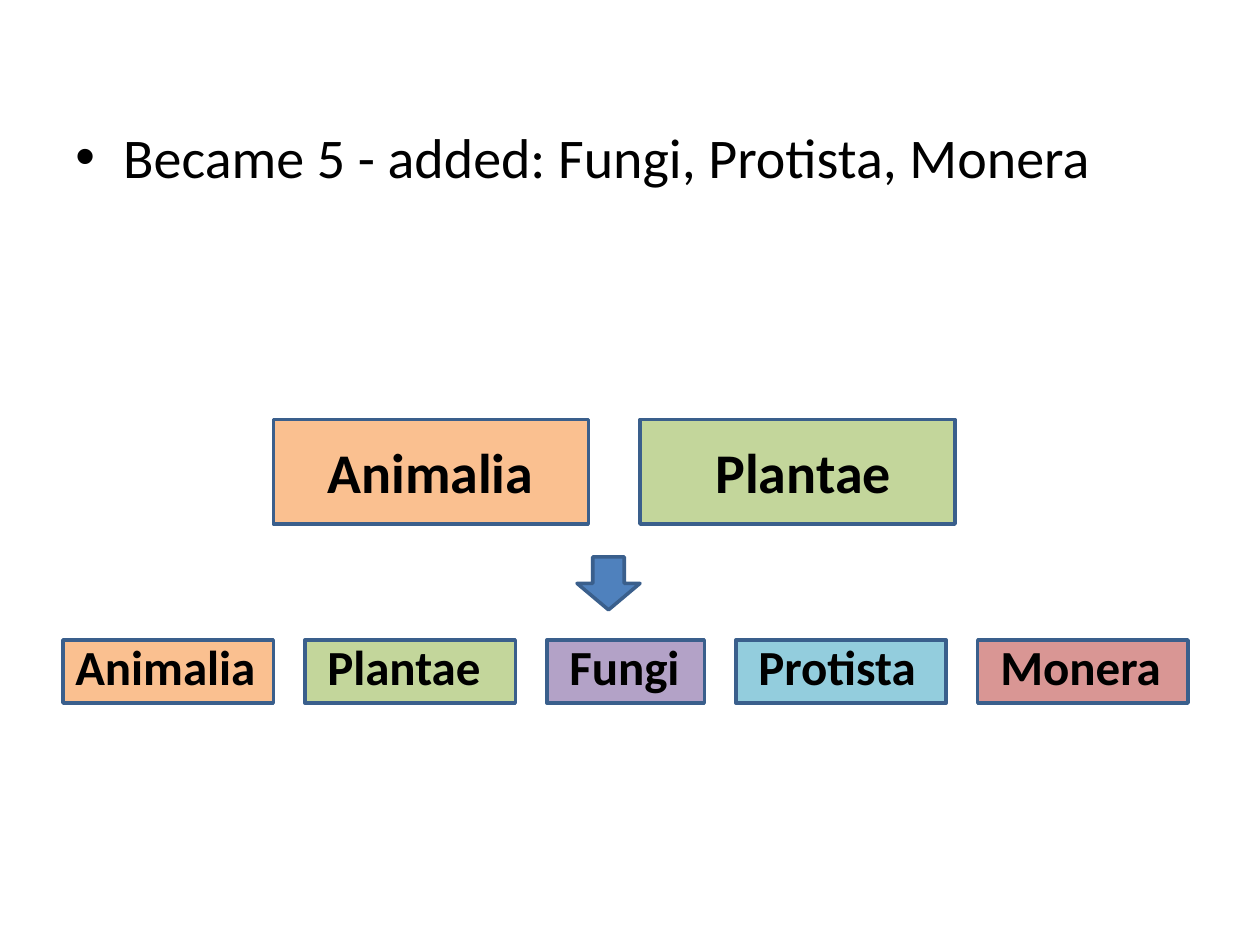
from dataclasses import dataclass

from lxml.etree import SubElement
from pptx import Presentation
from pptx.dml.color import RGBColor
from pptx.enum.shapes import MSO_SHAPE as Preset
from pptx.enum.text import MSO_AUTO_SIZE as AutoSize
from pptx.oxml.ns import qn
from pptx.util import Inches, Pt


@dataclass(frozen=True)
class Theme:
    """Colours, font and type sizes of the slide."""
    font: str = "Calibri"
    text: str = "000000"
    outline: str = "3A5F8C"
    arrow: str = "4F81BD"
    animalia: str = "FAC090"
    plantae: str = "C3D69B"
    fungi: str = "B3A2C7"
    protista: str = "93CDDD"
    monera: str = "D99694"
    large: int = 32
    medium: int = 28
    outline_width: int = 2


@dataclass(frozen=True)
class Kingdom:
    """A kingdom's box width, colour, and label inset and width."""
    name: str
    width: float
    color: str
    inset: float
    label_width: float


THEME = Theme()
TWO_KINGDOMS = [
    Kingdom("Animalia", 2.5, THEME.animalia, 0.33, 1.85),
    Kingdom("Plantae", 2.5, THEME.plantae, 0.5, 1.61),
]
FIVE_KINGDOMS = [
    Kingdom("Animalia", 1.67, THEME.animalia, 0, 1.67),
    Kingdom("Plantae", 1.67, THEME.plantae, 0.08, 1.43),
    Kingdom("Fungi", 1.25, THEME.fungi, 0.08, 1.09),
    Kingdom("Protista", 1.67, THEME.protista, 0.08, 1.47),
    Kingdom("Monera", 1.67, THEME.monera, 0.08, 1.49),
]


def add_text(shapes, text, box, *, size, bold=False, wrap=False, grow=True):
    """Add a text box and return its paragraph."""
    frame = shapes.add_textbox(*map(Inches, box)).text_frame
    frame.word_wrap = wrap
    frame.auto_size = AutoSize.SHAPE_TO_FIT_TEXT if grow else AutoSize.NONE
    paragraph = frame.paragraphs[0]
    run = paragraph.add_run()
    run.text = text
    run.font.name = THEME.font
    run.font.size = Pt(size)
    run.font.bold = bold
    run.font.color.rgb = RGBColor.from_string(THEME.text)
    return paragraph


def add_outlined_shape(shapes, preset, box, color):
    """Add a filled preset shape with the common outline."""
    shape = shapes.add_shape(preset, *map(Inches, box))
    shape.shadow.inherit = False
    shape.fill.solid()
    shape.fill.fore_color.rgb = RGBColor.from_string(color)
    shape.line.color.rgb = RGBColor.from_string(THEME.outline)
    shape.line.width = Pt(THEME.outline_width)


def add_bullet(slide, text, box):
    """Add a body text box holding one bullet point."""
    paragraph = add_text(slide.shapes, text, box, size=THEME.large, wrap=True, grow=False)
    paragraph.space_before = Pt(0.2 * THEME.large)
    properties = paragraph._p.get_or_add_pPr()
    properties.set("marL", str(Inches(0.38)))
    properties.set("indent", str(Inches(-0.38)))
    SubElement(properties, qn("a:buFont"), typeface="Arial")
    SubElement(properties, qn("a:buChar"), char="•")


def add_kingdom_row(slide, kingdoms, box, *, gap, label_shift, label_height, size):
    """Add a row of grouped, labelled kingdom boxes from the left of the box."""
    left, top, height = box
    shapes = slide.shapes.add_group_shape().shapes
    for kingdom in kingdoms:
        add_outlined_shape(shapes, Preset.RECTANGLE, (left, top, kingdom.width, height), kingdom.color)
        label_box = (left + kingdom.inset, top + label_shift, kingdom.label_width, label_height)
        add_text(shapes, kingdom.name, label_box, size=size, bold=True)
        left += kingdom.width + gap


def build_slide(presentation):
    """Build the slide showing two kingdoms becoming five."""
    slide = presentation.slides.add_slide(presentation.slide_layouts[6])
    add_bullet(slide, "Became 5 - added: Fungi, Protista, Monera", (0.5, 0.92, 9, 5.78))
    add_kingdom_row(slide, TWO_KINGDOMS, (2.17, 3.33, 0.83), gap=0.41,
                    label_shift=0.09, label_height=0.64, size=THEME.large)
    add_kingdom_row(slide, FIVE_KINGDOMS, (0.5, 5.08, 0.5), gap=0.25,
                    label_shift=-0.08, label_height=0.57, size=THEME.medium)
    add_outlined_shape(slide.shapes, Preset.DOWN_ARROW, (4.58, 4.42, 0.5, 0.42), THEME.arrow)


def main():
    """Create and save the presentation."""
    presentation = Presentation()
    presentation.slide_width = Inches(10)
    presentation.slide_height = Inches(7.5)
    build_slide(presentation)
    presentation.save("out.pptx")


if __name__ == "__main__":
    main()
